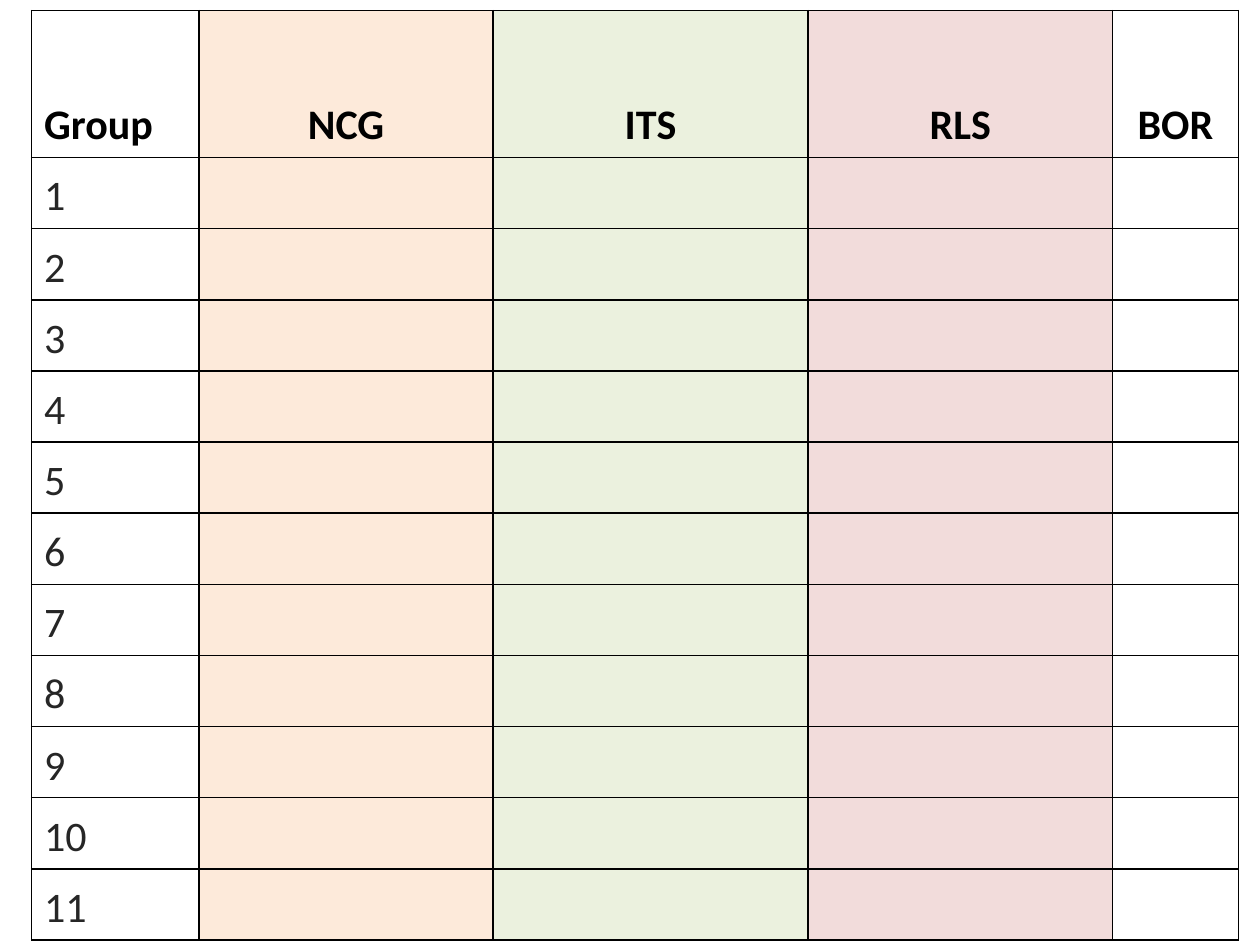
import pptx
import pptx.util
import pptx.dml.color
import pptx.enum.text
import pptx.oxml
import pptx.oxml.ns

Pt = pptx.util.Pt
RGBColor = pptx.dml.color.RGBColor
PP_ALIGN = pptx.enum.text.PP_ALIGN

COLORS = {
    "border": "000000",
    "header": "000000",
    "number": "262626",
    "NCG": "FDEADA",
    "ITS": "EBF1DE",
    "RLS": "F2DCDB",
}
COLUMN_WIDTHS = {"Group": 95.76, "NCG": 168, "ITS": 180, "RLS": 174, "BOR": 72}
GROUP_COUNT = 11
HEADER_HEIGHT = 84
ROW_HEIGHT = 40.65


def add_borders(cell):
    properties = cell._tc.get_or_add_tcPr()
    for side in ("lnL", "lnR", "lnT", "lnB"):
        properties.append(pptx.oxml.parse_xml(
            f'<a:{side} {pptx.oxml.ns.nsdecls("a")} w="{Pt(1)}">'
            f'<a:solidFill><a:srgbClr val="{COLORS["border"]}"/></a:solidFill>'
            f'</a:{side}>'))


def write_cell(cell, text, color, bold, alignment):
    paragraph = cell.text_frame.paragraphs[0]
    paragraph.alignment = alignment
    run = paragraph.add_run()
    run.text = text
    for name, value in {"name": "Calibri", "size": Pt(24), "bold": bold}.items():
        setattr(run.font, name, value)
    run.font.color.rgb = RGBColor.from_string(color)


# Slide
presentation = pptx.Presentation()
presentation.slide_width, presentation.slide_height = Pt(720), Pt(540)
slide = presentation.slides.add_slide(presentation.slide_layouts[6])

# Score table
table = slide.shapes.add_table(
    GROUP_COUNT + 1, len(COLUMN_WIDTHS), Pt(18), Pt(6),
    Pt(sum(COLUMN_WIDTHS.values())),
    Pt(HEADER_HEIGHT + GROUP_COUNT * ROW_HEIGHT)).table
table.first_row = False
table.horz_banding = False
for column, width in zip(table.columns, COLUMN_WIDTHS.values()):
    column.width = Pt(width)
for index, row in enumerate(table.rows):
    row.height = Pt(ROW_HEIGHT if index else HEADER_HEIGHT)

# Borders, fills and text
cell_format = {
    "vertical_anchor": pptx.enum.text.MSO_ANCHOR.BOTTOM,
    "margin_left": Pt(7.2),
    "margin_right": Pt(7.2),
    "margin_top": Pt(3.6),
    "margin_bottom": Pt(3.6),
}
for row_index, row in enumerate(table.rows):
    for heading, cell in zip(COLUMN_WIDTHS, row.cells):
        for name, value in cell_format.items():
            setattr(cell, name, value)
        add_borders(cell)
        if heading in COLORS:
            cell.fill.solid()
            cell.fill.fore_color.rgb = RGBColor.from_string(COLORS[heading])
        else:
            cell.fill.background()
        if row_index == 0:
            alignment = PP_ALIGN.LEFT if heading == "Group" else PP_ALIGN.CENTER
            write_cell(cell, heading, COLORS["header"], True, alignment)
        elif heading == "Group":
            write_cell(cell, str(row_index), COLORS["number"], False, PP_ALIGN.LEFT)

presentation.save("out.pptx")
